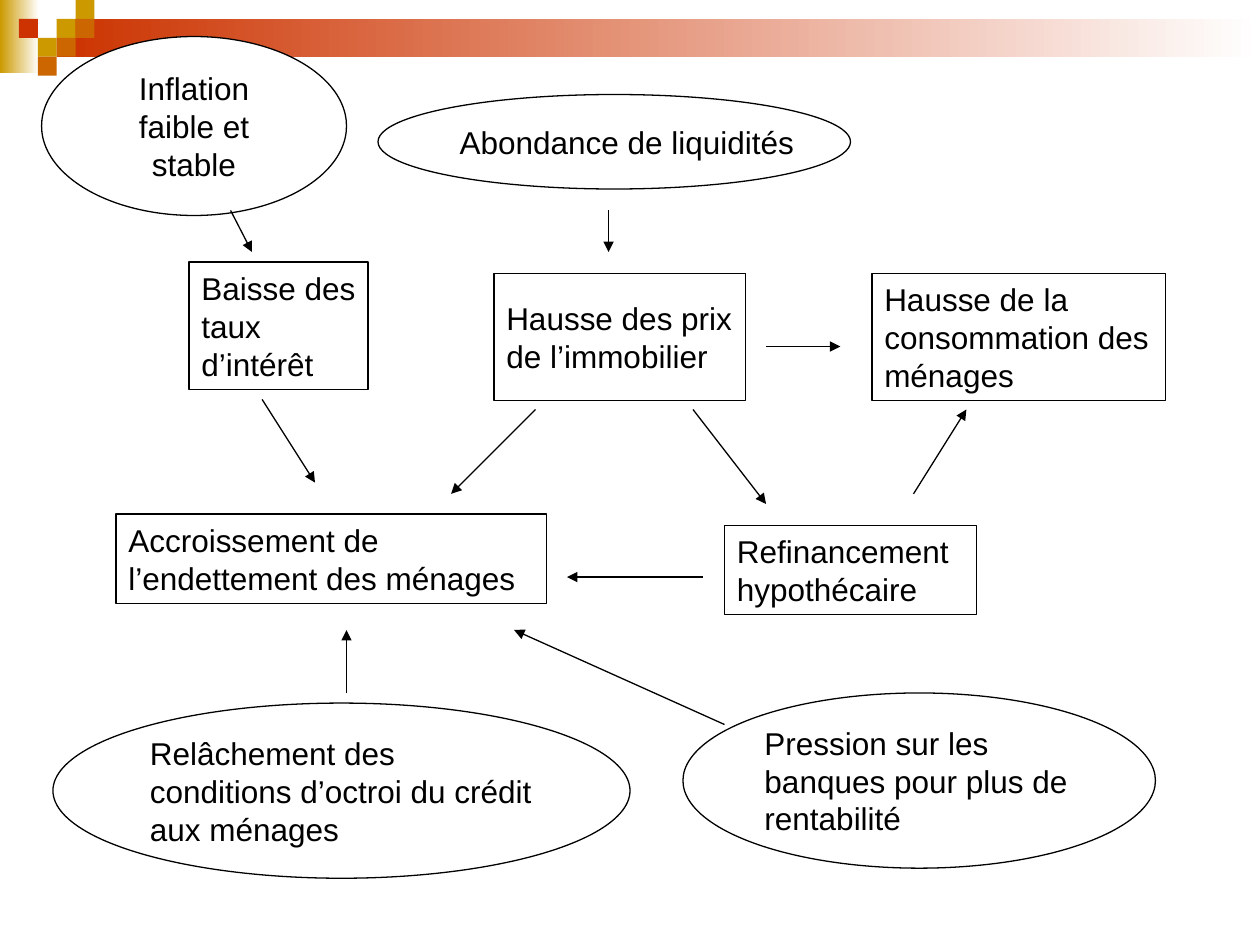
from lxml.etree import SubElement
from pptx import Presentation
from pptx.dml.color import RGBColor
from pptx.enum.shapes import MSO_CONNECTOR, MSO_SHAPE
from pptx.enum.text import MSO_ANCHOR, PP_ALIGN
from pptx.oxml.ns import qn
from pptx.util import Inches, Pt

BLACK = RGBColor(0x00, 0x00, 0x00)
WHITE = RGBColor(0xFF, 0xFF, 0xFF)
GOLD = RGBColor(0xCC, 0x99, 0x00)
ORANGE = RGBColor(0xCC, 0x66, 0x00)
RED = RGBColor(0xCC, 0x33, 0x00)

LINE_WIDTH = Pt(0.75)
TILE = 0.15

# Column and row of each tile on the corner grid
TILES = [
    (3, 1, GOLD), (4, 0, GOLD), (4, 1, ORANGE), (2, 2, GOLD),
    (1, 1, RED), (3, 2, ORANGE), (2, 3, ORANGE),
]

BOXES = [
    ("Baisse des taux d’intérêt", 1.5, 2.08, 1.42, 1.01),
    ("Hausse des prix de l’immobilier", 3.92, 2.17, 2, 1.01),
    ("Hausse de la consommation des ménages", 6.92, 2.17, 2.33, 1.01),
    ("Accroissement de l’endettement des ménages", 0.92, 4.08, 3.42, 0.71),
    ("Refinancement hypothécaire", 5.75, 4.17, 2, 0.71),
]

ARROWS = [
    (1.83, 1.67, 2, 2),         # inflation -> taux
    (4.83, 1.67, 4.83, 2),      # liquidités -> immobilier
    (2.08, 3.17, 2.5, 3.83),    # taux -> endettement
    (4.25, 3.25, 3.58, 3.92),   # immobilier -> endettement
    (5.5, 3.25, 6.08, 4),       # immobilier -> refinancement
    (6.08, 2.75, 6.67, 2.75),   # immobilier -> consommation
    (7.25, 3.92, 7.67, 3.25),   # refinancement -> consommation
    (5.58, 4.58, 4.5, 4.58),    # refinancement -> endettement
    (2.75, 5.5, 2.75, 5),       # crédit -> endettement
    (5.75, 5.75, 4.08, 5),      # banques -> endettement
]


def add_shape(slide, kind, x, y, w, h, fill=WHITE):
    """Add a filled shape without outline or shadow."""
    s = slide.shapes.add_shape(kind, Inches(x), Inches(y), Inches(w), Inches(h))
    s.shadow.inherit = False
    s.fill.solid()
    s.fill.fore_color.rgb = fill
    s.line.fill.background()
    return s


def add_fading_band(slide, x, y, w, h, color):
    s = add_shape(slide, MSO_SHAPE.RECTANGLE, x, y, w, h)
    s.fill.gradient()
    s.fill.gradient_angle = 0
    for stop, rgb in zip(s.fill.gradient_stops, (color, WHITE)):
        stop.color.rgb = rgb


def set_text(s, text, align=PP_ALIGN.LEFT, wrap=True, size=18, color=BLACK):
    tf = s.text_frame
    tf.word_wrap = wrap
    tf.vertical_anchor = MSO_ANCHOR.MIDDLE
    p = tf.paragraphs[0]
    p.alignment = align
    r = p.add_run()
    r.text = text
    r.font.name = "Arial"
    r.font.size = Pt(size)
    r.font.color.rgb = color


def add_node(slide, kind, text, x, y, w, h, **text_format):
    """Add an outlined shape that holds one step of the diagram."""
    s = add_shape(slide, kind, x, y, w, h)
    s.line.color.rgb = BLACK
    s.line.width = LINE_WIDTH
    set_text(s, text, **text_format)


def add_arrow(slide, x1, y1, x2, y2):
    c = slide.shapes.add_connector(
        MSO_CONNECTOR.STRAIGHT, Inches(x1), Inches(y1), Inches(x2), Inches(y2))
    c.line.color.rgb = BLACK
    c.line.width = LINE_WIDTH
    SubElement(c.line._get_or_add_ln(), qn("a:tailEnd"), type="triangle")
    SubElement(c._element.spPr, qn("a:effectLst"))


def add_corner_decoration(slide):
    add_fading_band(slide, 0, 0, 0.31, 0.58, GOLD)
    add_fading_band(slide, 0.45, 0.15, 9.55, 0.3, RED)
    for col, row, color in TILES:
        add_shape(slide, MSO_SHAPE.RECTANGLE, col * TILE, row * TILE,
                  TILE, TILE, fill=color)


def main():
    prs = Presentation()
    prs.slide_width, prs.slide_height = Inches(10), Inches(7.5)
    slide = prs.slides.add_slide(prs.slide_layouts[6])

    add_corner_decoration(slide)
    for box in BOXES:
        add_node(slide, MSO_SHAPE.RECTANGLE, *box)

    oval = MSO_SHAPE.OVAL
    add_node(slide, oval, "Inflation faible et stable",
             0.33, 0.29, 2.42, 1.42, align=PP_ALIGN.CENTER)
    add_node(slide, oval, "Abondance de liquidités",
             3, 0.75, 3.75, 0.75, wrap=False)
    add_node(slide, oval, "Relâchement des conditions d’octroi du crédit aux ménages",
             0.42, 5.58, 4.58, 1.39)
    add_node(slide, oval, "Pression sur les banques pour plus de rentabilité",
             5.42, 5.5, 3.75, 1.39)

    for arrow in ARROWS:
        add_arrow(slide, *arrow)
    prs.save("out.pptx")


if __name__ == "__main__":
    main()
